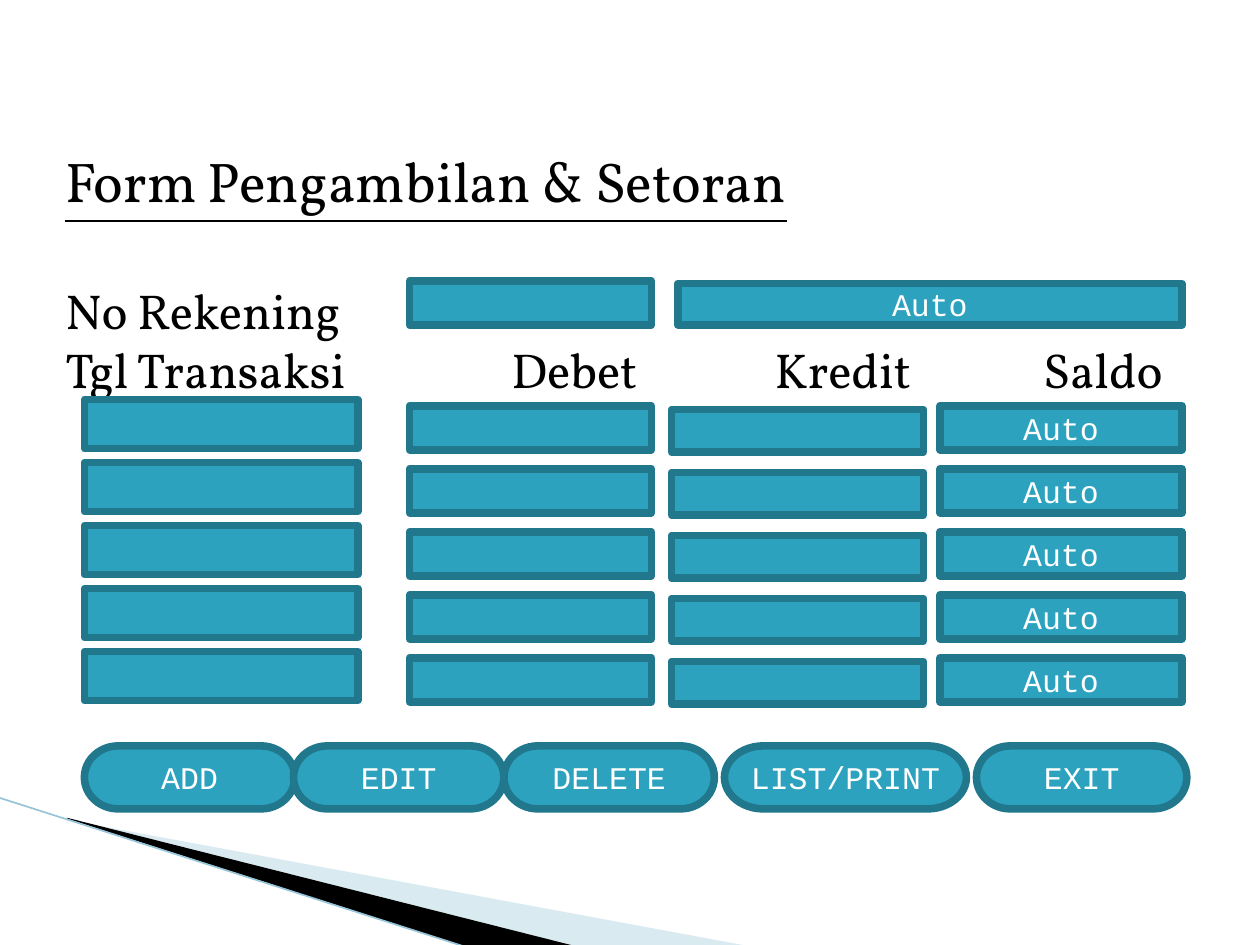
from lxml import etree
from pptx import Presentation
from pptx.dml.color import RGBColor
from pptx.enum.shapes import MSO_CONNECTOR, MSO_SHAPE
from pptx.enum.text import MSO_ANCHOR, PP_ALIGN
from pptx.oxml.ns import qn
from pptx.util import Inches, Pt

RECTANGLE = MSO_SHAPE.RECTANGLE
TERMINATOR = MSO_SHAPE.FLOWCHART_TERMINATOR
STRAIGHT = MSO_CONNECTOR.STRAIGHT
MIDDLE = MSO_ANCHOR.MIDDLE
CENTER, LEFT = PP_ALIGN.CENTER, PP_ALIGN.LEFT

COLORS = {"text": "000000", "label": "FFFFFF", "field": "2DA2BF", "border": "21788D",
          "pale": "A0CBDC", "dark": "000000", "edge": "97C5D8"}
HEADING_FONT, LABEL_FONT = "Vollkorn", "Courier New"

TITLE = "Form Pengambilan & Setoran"
ACCOUNT = "No Rekening"
COLUMN_HEADS = ["Tgl Transaksi", "Debet", "Kredit", "Saldo"]
HEAD_TABS = [3.54, 5.63, 7.76]

ACCOUNT_FIELDS = [("", 3.25, 2.23, 1.92, 0.35), ("Auto", 5.38, 2.25, 4, 0.33)]
COLUMN_FIELDS = [("", 0.67, 3.17, 2.17, 0.39), ("", 3.25, 3.22, 1.92, 0.35),
                 ("", 5.33, 3.25, 2, 0.34), ("Auto", 7.46, 3.22, 1.92, 0.35)]
ROW_COUNT, ROW_PITCH = 5, 0.5
BUTTONS = [("ADD", 0.67, 1.67), ("EDIT", 2.33, 1.67), ("DELETE", 4, 1.67),
           ("LIST/PRINT", 5.75, 1.92), ("EXIT", 7.75, 1.67)]
BUTTON_TOP, BUTTON_HEIGHT = 5.92, 0.5

WEDGES = [("pale", 40, [(0.55, 6.51), (5.95, 7.51), (4.56, 7.51), (0.55, 6.5)]),
          ("dark", 100, [(0.53, 6.49), (4.57, 7.51), (3.72, 7.52), (0.54, 6.5)])]
EDGE = [(-0.01, 6.33), (3.71, 7.52)]


def rgb(name):
    return RGBColor.from_string(COLORS[name])


def write(paragraph, text, size, font, color, align=LEFT, underline=False, before=0):
    paragraph.alignment = align
    if before:
        paragraph.space_before = Pt(before)
    run = paragraph.add_run()
    run.text = text
    run.font.size = Pt(size)
    run.font.name = font
    run.font.underline = underline
    run.font.color.rgb = rgb(color)


def add_field(slide, text, left, top, width, height, kind=RECTANGLE):
    field = slide.shapes.add_shape(kind, *map(Inches, (left, top, width, height)))
    field.shadow.inherit = False
    field.fill.solid()
    field.fill.fore_color.rgb = rgb("field")
    field.line.color.rgb = rgb("border")
    field.line.width = Pt(4.33)
    if text:
        frame = field.text_frame
        frame.vertical_anchor = MIDDLE
        frame.word_wrap = True
        write(frame.paragraphs[0], text, 18, LABEL_FONT, "label", align=CENTER)


def add_wedge(slide, color, opacity, points):
    start, *others = [(Inches(x), Inches(y)) for x, y in points]
    builder = slide.shapes.build_freeform(*start)
    builder.add_line_segments(others, close=True)
    wedge = builder.convert_to_shape()
    wedge.shadow.inherit = False
    wedge.fill.solid()
    wedge.fill.fore_color.rgb = rgb(color)
    wedge.line.fill.background()
    if opacity < 100:
        fill_color = wedge.fill._xPr.find(qn("a:solidFill"))[0]
        etree.SubElement(fill_color, qn("a:alpha"), val=str(opacity * 1000))


def add_edge(slide):
    (x1, y1), (x2, y2) = EDGE
    edge = slide.shapes.add_connector(STRAIGHT, *map(Inches, (x1, y1, x2, y2)))
    edge.line.color.rgb = rgb("edge")
    edge.line.width = Pt(0.95)
    etree.SubElement(edge._element.spPr, qn("a:effectLst"))


def add_headings(slide):
    box = slide.shapes.add_textbox(*map(Inches, (0.42, 1.11, 9.17, 2.59)))
    frame = box.text_frame
    frame.word_wrap = True
    write(frame.paragraphs[0], TITLE, 32, HEADING_FONT, "text", underline=True)
    write(frame.add_paragraph(), ACCOUNT, 28, HEADING_FONT, "text", before=38.5)
    heads = frame.add_paragraph()
    tabs = etree.SubElement(heads._p.get_or_add_pPr(), qn("a:tabLst"))
    for position in HEAD_TABS:
        etree.SubElement(tabs, qn("a:tab"), pos=str(Inches(position)), algn="l")
    write(heads, "\t".join(COLUMN_HEADS), 28, HEADING_FONT, "text")


def main():
    deck = Presentation()
    deck.slide_width, deck.slide_height = Inches(10), Inches(7.5)
    slide = deck.slides.add_slide(deck.slide_layouts[6])
    for wedge in WEDGES:
        add_wedge(slide, *wedge)
    add_edge(slide)
    add_headings(slide)
    for field in ACCOUNT_FIELDS:
        add_field(slide, *field)
    for row in range(ROW_COUNT):
        for text, left, top, width, height in COLUMN_FIELDS:
            add_field(slide, text, left, top + row * ROW_PITCH, width, height)
    for text, left, width in BUTTONS:
        add_field(slide, text, left, BUTTON_TOP, width, BUTTON_HEIGHT, kind=TERMINATOR)
    deck.save("out.pptx")


if __name__ == "__main__":
    main()
